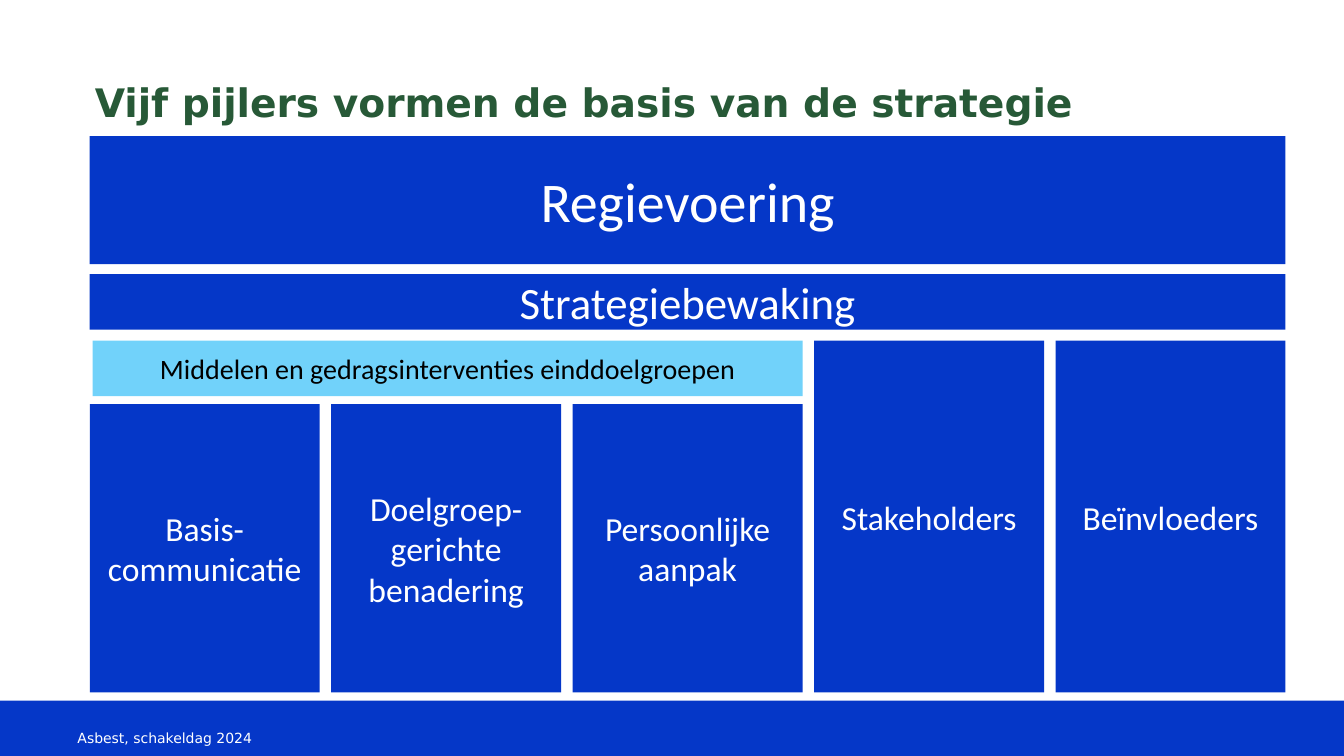
from pptx import Presentation, util as u
from pptx.dml.color import RGBColor
from pptx.enum import text

theme = {
    "blue": "0537C8", "sky": "71D2FA", "green": "275937",
    "white": "FFFFFF", "black": "000000",
    "heading_font": "DejaVu Sans", "body_font": "Calibri",
    "title": 28, "direction": 40, "monitoring": 32,
    "pillar": 24, "means": 20, "footer": 10,
}

deck = Presentation()
deck.slide_width, deck.slide_height = u.Inches(13.33), u.Inches(7.5)
slide = deck.slides.add_slide(deck.slide_layouts[5])


def write(frame, words, size, colour, font, align, bold=False):
    frame.text = words
    frame.word_wrap = True
    frame.vertical_anchor = text.MSO_ANCHOR.MIDDLE
    paragraph = frame.paragraphs[0]
    paragraph.alignment = align
    paragraph.font.size = u.Pt(theme[size])
    paragraph.font.name = theme[font]
    paragraph.font.bold = bold
    paragraph.font.color.rgb = RGBColor.from_string(theme[colour])


def block(left, top, width, height, words="", size="pillar", fill="blue", colour="white"):
    panel = slide.shapes.add_shape(1, *map(u.Inches, (left, top, width, height)))
    panel.shadow.inherit = False
    panel.fill.solid()
    panel.fill.fore_color.rgb = RGBColor.from_string(theme[fill])
    panel.line.fill.background()
    if words:
        write(panel.text_frame, words, size, colour, "body_font", text.PP_ALIGN.CENTER)


# Title
title = slide.shapes.title
title.left, title.top, title.width, title.height = map(u.Inches, (0.84, 0.73, 11.18, 0.57))
write(title.text_frame, "Vijf pijlers vormen de basis van de strategie",
      "title", "green", "heading_font", text.PP_ALIGN.LEFT, bold=True)
title.text_frame.auto_size = text.MSO_AUTO_SIZE.SHAPE_TO_FIT_TEXT

# Grid: five pillars under the full-width beams
left, full_width = 0.89, 11.86
pillar_width = 2.28
pitch = (full_width - pillar_width) / 4
tall_top, short_top, pillar_bottom = 3.38, 4.01, 6.87
beam_height = 0.55

# Beams
block(left, 1.35, full_width, 1.27, "Regievoering", "direction")
block(left, 2.72, full_width, beam_height, "Strategiebewaking", "monitoring")
block(0.92, tall_top, 7.04, beam_height,
      "Middelen en gedragsinterventies einddoelgroepen", "means", "sky", "black")

# Pillars: the first three stand below the shared means
pillars = [
    ("Basis-communicatie", short_top),
    ("Doelgroep-gerichte benadering", short_top),
    ("Persoonlijke aanpak", short_top),
    ("Stakeholders", tall_top),
    ("Beïnvloeders", tall_top),
]
for column, (name, top) in enumerate(pillars):
    block(left + column * pitch, top, pillar_width, pillar_bottom - top, name)

# Footer
block(0, 6.95, 13.33, beam_height)
footer = slide.shapes.add_textbox(*map(u.Inches, (0.67, 7.12, 4.22, 0.4)))
write(footer.text_frame, "Asbest, schakeldag 2024",
      "footer", "white", "heading_font", text.PP_ALIGN.LEFT)

deck.save("out.pptx")
